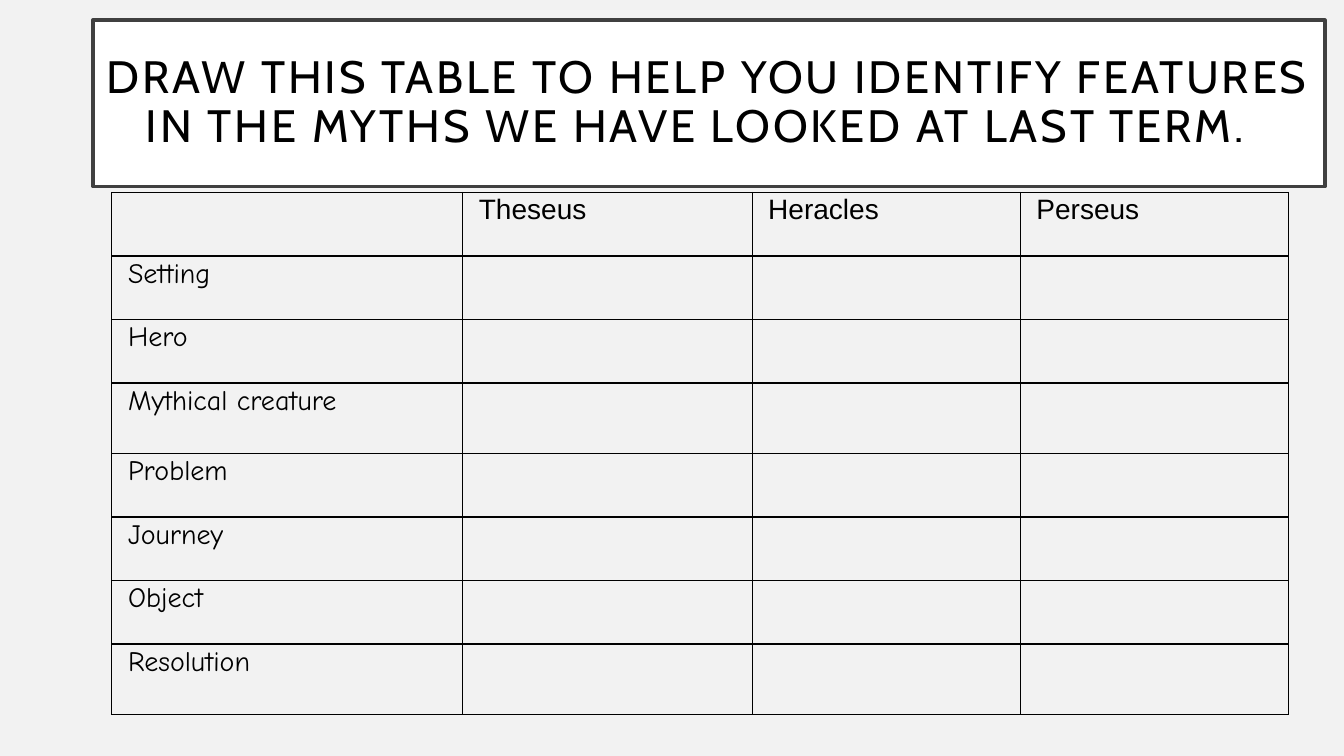
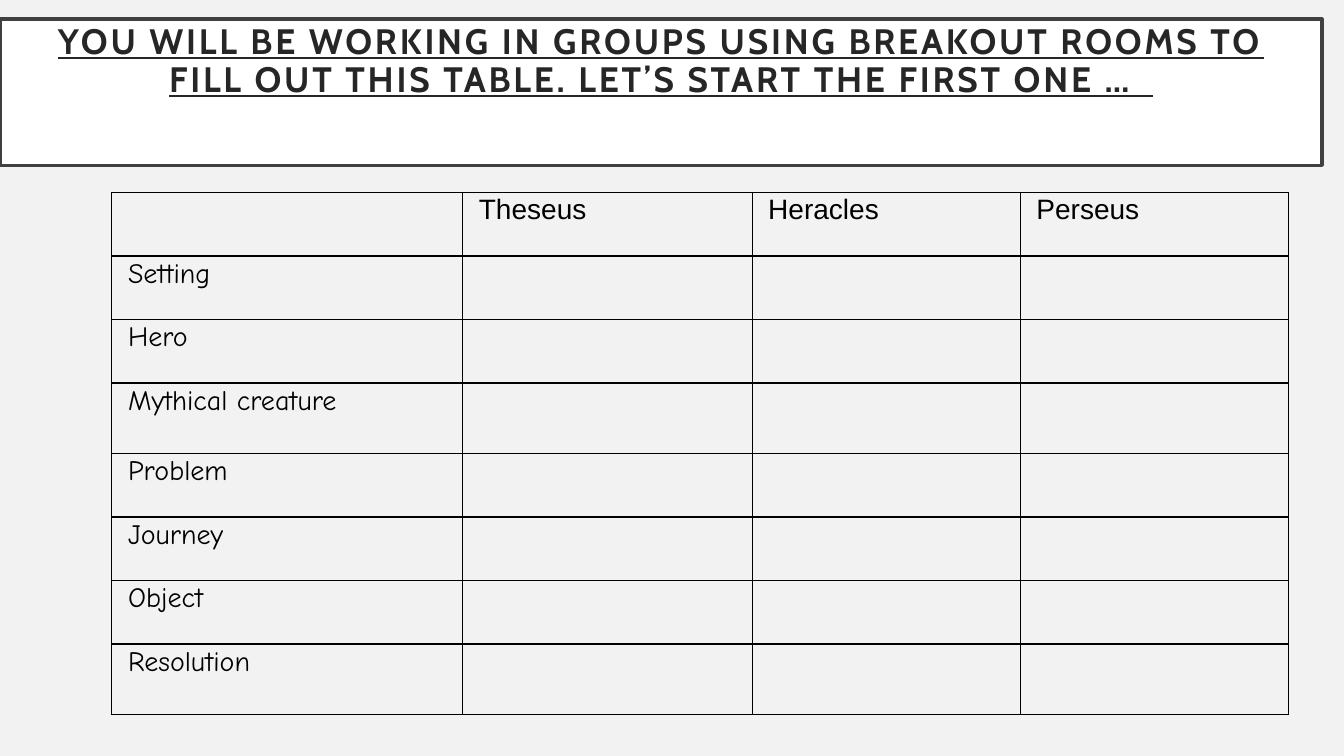
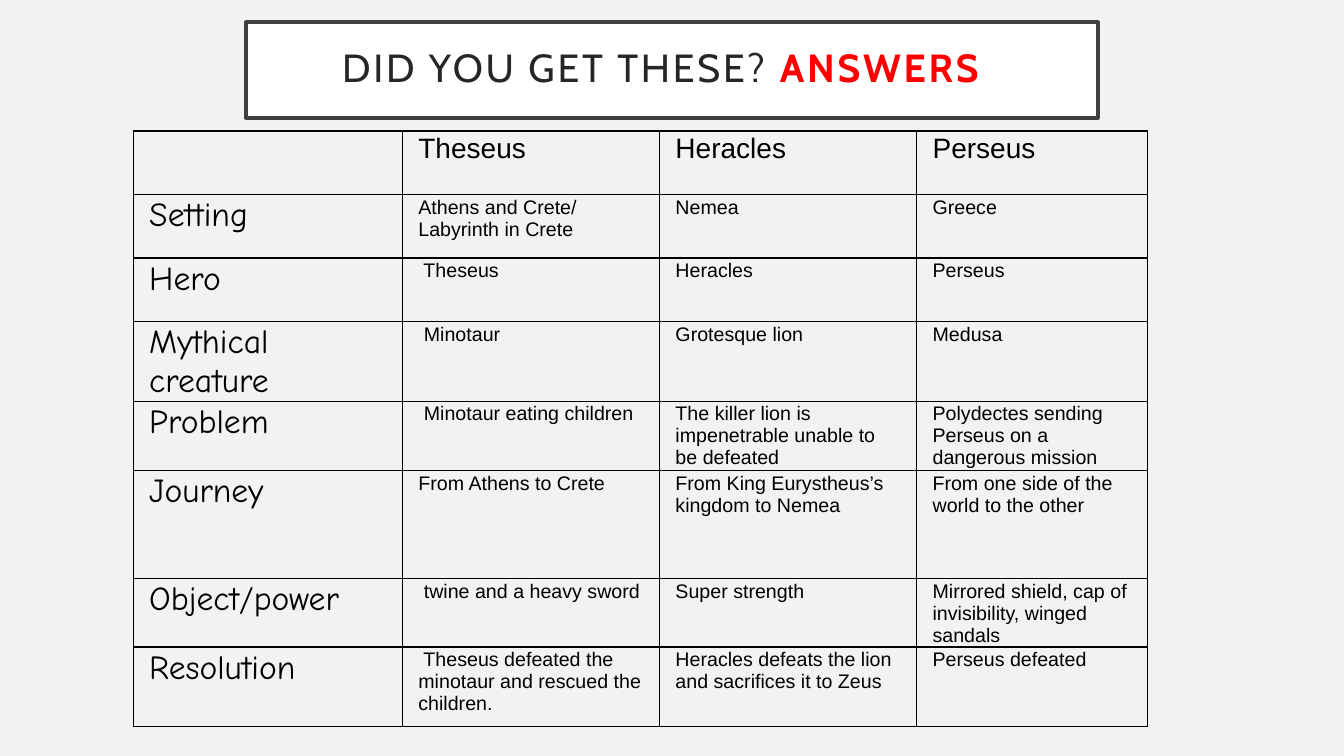
from lxml.etree import SubElement
from pptx import Presentation
from pptx.dml.color import RGBColor
from pptx.enum.text import MSO_ANCHOR, MSO_AUTO_SIZE, PP_ALIGN
from pptx.oxml.ns import qn
from pptx.util import Inches, Pt

# Shared look
PAGE, WHITE, FRAME = "F2F2F2", "FFFFFF", "404040"
BLACK, CHARCOAL, RED = "000000", "262626", "FF0000"
TITLE_FONT, BODY_FONT, LABEL_FONT = "Cabin", "Arial", "Comic Neue"


def rgb(hex_colour):
    return RGBColor.from_string(hex_colour)


def add_borders(cell):
    tc_pr = cell._tc.get_or_add_tcPr()
    for side in ("a:lnL", "a:lnR", "a:lnT", "a:lnB"):
        border = SubElement(tc_pr, qn(side), w=str(Pt(1)))
        fill = SubElement(border, qn("a:solidFill"))
        SubElement(fill, qn("a:srgbClr"), val=BLACK)


# Table content
heroes = ["", "Theseus", "Heracles", "Perseus"]
features = ["Setting", "Hero", "Mythical creature", "Problem", "Journey",
            "Object", "Resolution"]
blank_table = {
    "rows": [heroes] + [[feature, "", "", ""] for feature in features],
    "at": (1.11, 1.91),
    "widths": [3.48, 2.87, 2.66, 2.66],
    "heights": [0.63, 0.63, 0.63, 0.7, 0.63, 0.63, 0.63, 0.7],
    "label_size": 20,
}
answer_table = {
    "rows": [
        heroes,
        ["Setting", "Athens and Crete/\nLabyrinth in Crete", "Nemea", "Greece"],
        ["Hero", " Theseus", "Heracles", "Perseus"],
        ["Mythical creature", " Minotaur", "Grotesque lion", "Medusa"],
        ["Problem", " Minotaur eating children",
         "The killer lion is impenetrable unable to be defeated",
         "Polydectes sending Perseus on a dangerous mission"],
        ["Journey", "From Athens to Crete",
         "From King Eurystheus’s kingdom to Nemea",
         "From one side of the world to the other"],
        ["Object/power", " twine and a heavy sword", "Super strength",
         "Mirrored shield, cap of invisibility, winged sandals"],
        ["Resolution",
         " Theseus defeated the minotaur and rescued the children.",
         "Heracles defeats the lion and sacrifices it to Zeus",
         "Perseus defeated"],
    ],
    "at": (1.32, 1.3),
    "widths": [2.67, 2.55, 2.55, 2.29],
    "heights": [0.63, 0.63, 0.63, 0.79, 0.69, 1.07, 0.68, 0.79],
    "label_size": 24,
}

# Title pieces are (text, colour, bold, underlined)
lessons = [
    {"title": [("DRAW THIS TABLE TO HELP YOU IDENTIFY FEATURES IN THE MYTHS "
                "WE HAVE LOOKED AT LAST TERM.  ", BLACK, False, False)],
     "box": (0.92, 0.2, 12.22, 1.65), "size": 32.4, "side_inset": 0.1,
     "top_inset": 0.05, "anchor": MSO_ANCHOR.MIDDLE, "table": blank_table},
    {"title": [("YOU WILL BE WORKING IN GROUPS USING BREAKOUT ROOMS TO FILL OUT "
                "THIS TABLE. LET’S START THE FIRST ONE …  ",
                CHARCOAL, True, True)],
     "box": (0, 0.19, 13.11, 1.45), "size": 25.2, "side_inset": 0.2,
     "top_inset": 0.05, "anchor": MSO_ANCHOR.TOP, "table": blank_table},
    {"title": [("DID YOU GET THESE? ", CHARCOAL, False, False),
               ("ANSWERS  ", RED, True, False)],
     "box": (2.44, 0.22, 8.45, 0.95), "size": 28, "side_inset": 0.2,
     "top_inset": 0.2, "anchor": MSO_ANCHOR.MIDDLE, "table": answer_table},
]

deck = Presentation()
deck.slide_width, deck.slide_height = Inches(13.33), Inches(7.5)
page_fill = deck.slide_master.background.fill
page_fill.solid()
page_fill.fore_color.rgb = rgb(PAGE)
title_only = deck.slide_layouts[5]

for lesson in lessons:
    slide = deck.slides.add_slide(title_only)

    # Framed title
    title = slide.shapes.title
    title.left, title.top, title.width, title.height = map(Inches, lesson["box"])
    title.fill.solid()
    title.fill.fore_color.rgb = rgb(WHITE)
    title.line.color.rgb = rgb(FRAME)
    title.line.width = Pt(2.5)
    frame = title.text_frame
    frame.word_wrap = True
    frame.auto_size = MSO_AUTO_SIZE.NONE
    frame.vertical_anchor = lesson["anchor"]
    frame.margin_left = frame.margin_right = Inches(lesson["side_inset"])
    frame.margin_top = frame.margin_bottom = Inches(lesson["top_inset"])
    heading = frame.paragraphs[0]
    heading.alignment = PP_ALIGN.CENTER
    heading.line_spacing = 0.9
    for words, colour, bold, underlined in lesson["title"]:
        run = heading.add_run()
        run.text = words
        run.font.name = TITLE_FONT
        run.font.size = Pt(lesson["size"])
        run.font.color.rgb = rgb(colour)
        run.font.bold = bold
        run.font.underline = underlined
        run._r.get_or_add_rPr().set("spc", "200")

    # Feature table
    content = lesson["table"]
    widths, heights = content["widths"], content["heights"]
    left, top = content["at"]
    table = slide.shapes.add_table(
        len(heights), len(widths), Inches(left), Inches(top),
        Inches(sum(widths)), Inches(sum(heights))).table
    table.first_row = table.horz_banding = False
    for column, width in zip(table.columns, widths):
        column.width = Inches(width)
    for row, height in zip(table.rows, heights):
        row.height = Inches(height)

    for r, texts in enumerate(content["rows"]):
        for c, words in enumerate(texts):
            cell = table.cell(r, c)
            add_borders(cell)
            cell.fill.background()
            cell.margin_left = cell.margin_right = Inches(0.16)
            cell.margin_top, cell.margin_bottom = Inches(0.02), 0
            if not words:
                continue
            if r == 0:
                font_name, size = BODY_FONT, 20
            elif c == 0:
                font_name, size = LABEL_FONT, content["label_size"]
            else:
                font_name, size = BODY_FONT, 14
            cell.text_frame.text = words
            for paragraph in cell.text_frame.paragraphs:
                font = paragraph.runs[0].font
                font.name, font.size = font_name, Pt(size)
                font.color.rgb = rgb(BLACK)

deck.save("out.pptx")
